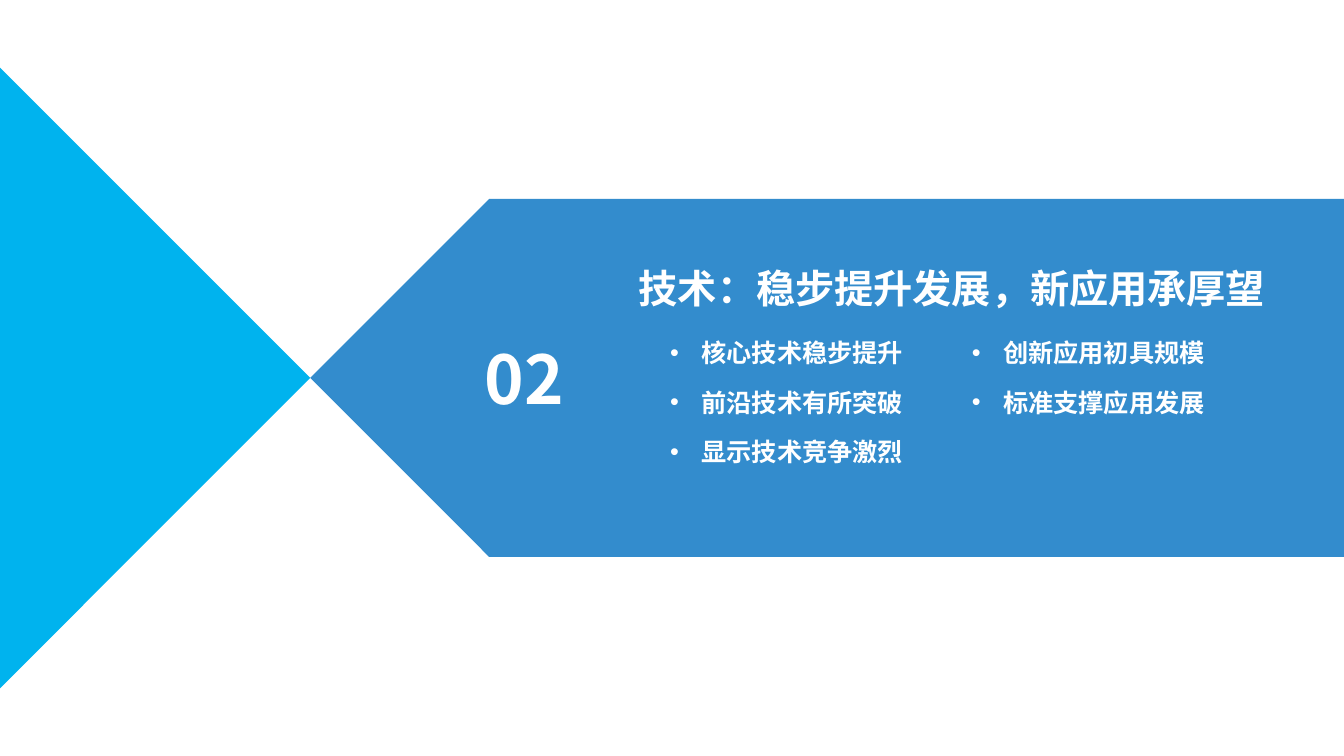
from pptx import Presentation
from pptx.dml.color import RGBColor
from pptx.enum.shapes import MSO_SHAPE as Shape
from pptx.enum.text import MSO_AUTO_SIZE as AutoSize, PP_ALIGN as Align
from pptx.oxml.ns import qn
from pptx.util import Cm, Pt
from lxml.etree import SubElement

SANS = "Noto Sans CJK SC"
WHITE = "FFFFFF"
PAGE_WIDTH, PAGE_HEIGHT = 33.87, 19.05
TIP_X, MIDDLE = 7.82, PAGE_HEIGHT / 2  # where the triangle meets the banner
BANNER_HEIGHT = 9.02
TOPICS = [
    ["核心技术稳步提升", "前沿技术有所突破", "显示技术竞争激烈"],
    ["创新应用初具规模", "标准支撑应用发展"],
]


def paint(shape, color, opacity=100):
    shape.shadow.inherit = False
    shape.fill.solid()
    shape.fill.fore_color.rgb = RGBColor.from_string(color)
    shape.line.fill.background()
    if opacity < 100:
        tint = shape.fill._xPr.find(".//" + qn("a:srgbClr"))
        SubElement(tint, qn("a:alpha"), val=str(opacity * 1000))


def add_bullet(para, indent):
    props = para._p.get_or_add_pPr()
    props.set("marL", str(Cm(indent)))
    props.set("indent", str(-Cm(indent)))
    SubElement(props, qn("a:buFont"), typeface="Arial")
    SubElement(props, qn("a:buChar"), char="•")


def add_text(page, text, left, top, width, height, size=18, font=SANS,
             color=WHITE, align=Align.LEFT, inset=None, bullet=False):
    box = page.shapes.add_textbox(Cm(left), Cm(top), Cm(width), Cm(height))
    frame = box.text_frame
    frame.word_wrap = True
    frame.auto_size = AutoSize.SHAPE_TO_FIT_TEXT
    if inset is not None:
        frame.margin_left = frame.margin_right = Cm(inset)
        frame.margin_top = frame.margin_bottom = Cm(inset)
    para = frame.paragraphs[0]
    para.alignment = align
    if bullet:
        add_bullet(para, 0.79)
    span = para.add_run()
    span.text = text
    span.font.name = font
    span.font.size = Pt(size)
    span.font.bold = True
    span.font.color.rgb = RGBColor.from_string(color)
    SubElement(span._r.get_or_add_rPr(), qn("a:ea"), typeface=font)


def add_banner(page):
    banner = page.shapes.add_shape(
        Shape.PENTAGON, Cm(TIP_X), Cm(MIDDLE - BANNER_HEIGHT / 2),
        Cm(PAGE_WIDTH - TIP_X), Cm(BANNER_HEIGHT))
    banner._element.spPr.xfrm.set("flipH", "1")
    paint(banner, "0170C1", opacity=80)


def add_triangle(page):
    builder = page.shapes.build_freeform(0, Cm(MIDDLE - TIP_X))
    builder.add_line_segments(
        [(Cm(TIP_X), Cm(MIDDLE)), (0, Cm(MIDDLE + TIP_X))], close=True)
    paint(builder.convert_to_shape(), "00B3EE")


def main():
    deck = Presentation()
    deck.slide_width, deck.slide_height = Cm(PAGE_WIDTH), Cm(PAGE_HEIGHT)
    page = deck.slides.add_slide(deck.slide_layouts[6])

    # Banner with section number and title
    add_banner(page)
    add_text(page, "02", 11.33, 8.38, 3.76, 2.31, size=48, align=Align.CENTER)
    add_text(page, "技术：稳步提升发展，新应用承厚望", 14.86, 6.65, 18.26, 1.19,
             size=28, font="Arial", align=Align.CENTER, inset=0)

    # Triangle at the left edge
    add_triangle(page)

    # Topics in two columns
    for column, topics in enumerate(TOPICS):
        for row, topic in enumerate(topics):
            add_text(page, topic, 16.64 + 7.6 * column, 8.38 + 1.25 * row,
                     7.37, 1.02, bullet=True)

    deck.save("out.pptx")


if __name__ == "__main__":
    main()
